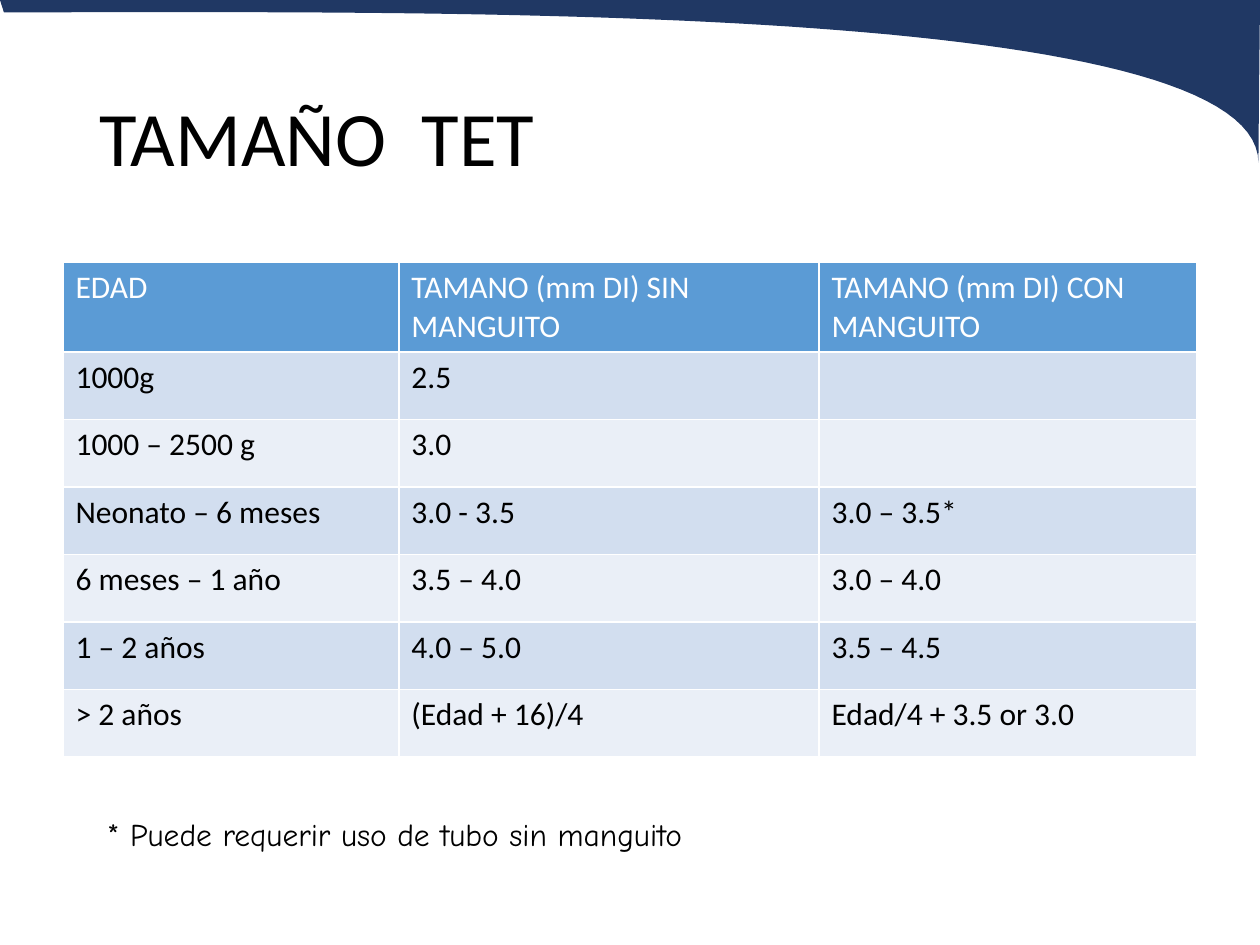
from dataclasses import dataclass

from lxml import etree
from pptx import Presentation
from pptx import util as u
from pptx.dml.color import RGBColor
from pptx.enum import text
from pptx.oxml import ns

BODY_FONT, NOTE_FONT = "Calibri", "Comic Neue"
NAVY, BLUE, BLACK, WHITE = "203864", "5B9BD5", "000000", "FFFFFF"
BANDS = ("D2DEEF", "EAEFF7")


@dataclass
class Curve:
    """Cubic Bézier with its four control points in centimetres."""
    start: tuple[float, float]
    first: tuple[float, float]
    second: tuple[float, float]
    end: tuple[float, float]

    def points(self, steps: int = 60) -> list[tuple[float, float]]:
        controls = (self.start, self.first, self.second, self.end)
        result = []
        for step in range(1, steps + 1):
            t = step / steps
            weights = ((1 - t) ** 3, 3 * t * (1 - t) ** 2, 3 * t * t * (1 - t), t ** 3)
            result.append(tuple(u.Cm(sum(w * c[axis] for w, c in zip(weights, controls)))
                                for axis in (0, 1)))
        return result


@dataclass
class SizeRow:
    age: str
    uncuffed: str
    cuffed: str = ""


HEADER = SizeRow("EDAD", "TAMANO (mm DI) SIN MANGUITO", "TAMANO (mm DI) CON MANGUITO")
SIZES = [
    SizeRow("1000g", "2.5"),
    SizeRow("1000 – 2500 g", "3.0"),
    SizeRow("Neonato – 6 meses", "3.0 - 3.5", "3.0 – 3.5*"),
    SizeRow("6 meses – 1 año", "3.5 – 4.0", "3.0 – 4.0"),
    SizeRow("1 – 2 años", "4.0 – 5.0", "3.5 – 4.5"),
    SizeRow("> 2 años", "(Edad + 16)/4", "Edad/4 + 3.5 or 3.0"),
]
COLUMN_WIDTHS = (6.77, 8.47, 7.62)
HEADER_HEIGHT, ROW_HEIGHT = 1.8, 1.36


def color(value: str) -> RGBColor:
    return RGBColor.from_string(value)


def set_font(font, name: str, size: float, ink: str) -> None:
    font.name, font.size, font.bold = name, u.Pt(size), False
    font.color.rgb = color(ink)


def draw_swoosh(page) -> None:
    edge = Curve((25.4, 0), (25.4, 0.36), (25.37, 2.92), (25.37, 3.28))
    sweep = Curve(edge.end, (25.35, 0), (8.53, 0.25), (0.08, 0.25))
    builder = page.shapes.build_freeform(0, 0)
    builder.add_line_segments([(u.Cm(25.4), 0), *edge.points(), *sweep.points()], close=True)
    swoosh = builder.convert_to_shape()
    swoosh.shadow.inherit = False
    swoosh.fill.solid()
    swoosh.fill.fore_color.rgb = color(NAVY)
    swoosh.line.fill.background()
    # Behind the title
    page.shapes._spTree.insert(2, swoosh._element)


def write_title(page) -> None:
    title = page.shapes.title
    title.left, title.top = u.Cm(1.75), u.Cm(1.02)
    title.width, title.height = u.Cm(21.9), u.Cm(3.68)
    frame = title.text_frame
    frame.vertical_anchor = text.MSO_ANCHOR.MIDDLE
    para = frame.paragraphs[0]
    para.alignment, para.line_spacing = text.PP_ALIGN.LEFT, 0.9
    spans = [para.add_run() for _ in range(3)]
    for span, words in zip(spans, ("TAMAÑO", " ", "TET")):
        span.text = words
    # Widen the gap between the two words
    spans[1]._r.get_or_add_rPr().set("spc", "1000")
    set_font(para.font, BODY_FONT, 44, BLACK)


def add_borders(cell) -> None:
    properties = cell._tc.get_or_add_tcPr()
    for side in ("a:lnL", "a:lnR", "a:lnT", "a:lnB"):
        line = etree.SubElement(properties, ns.qn(side), w=str(u.Pt(1)))
        fill = etree.SubElement(line, ns.qn("a:solidFill"))
        etree.SubElement(fill, ns.qn("a:srgbClr"), val=WHITE)


def fill_row(table, index: int, row: SizeRow, background: str, ink: str) -> None:
    for cell, words in zip(table.rows[index].cells, (row.age, row.uncuffed, row.cuffed)):
        add_borders(cell)
        cell.fill.solid()
        cell.fill.fore_color.rgb = color(background)
        cell.text = words
        set_font(cell.text_frame.paragraphs[0].font, BODY_FONT, 18, ink)


def draw_table(page) -> None:
    height = HEADER_HEIGHT + ROW_HEIGHT * len(SIZES)
    table = page.shapes.add_table(len(SIZES) + 1, len(COLUMN_WIDTHS), u.Cm(1.27), u.Cm(5.29),
                                  u.Cm(sum(COLUMN_WIDTHS)), u.Cm(height)).table
    for column, width in zip(table.columns, COLUMN_WIDTHS):
        column.width = u.Cm(width)
    for index, row in enumerate(table.rows):
        row.height = u.Cm(ROW_HEIGHT if index else HEADER_HEIGHT)
    fill_row(table, 0, HEADER, BLUE, WHITE)
    for index, size in enumerate(SIZES):
        fill_row(table, index + 1, size, BANDS[index % 2], BLACK)


def write_note(page) -> None:
    box = page.shapes.add_textbox(u.Cm(1.91), u.Cm(16.31), u.Cm(13.31), u.Cm(1.02))
    frame = box.text_frame
    frame.word_wrap = False
    frame.auto_size = text.MSO_AUTO_SIZE.SHAPE_TO_FIT_TEXT
    para = frame.paragraphs[0]
    para.text = "* Puede requerir uso de tubo sin manguito"
    set_font(para.font, NOTE_FONT, 18, BLACK)


def main() -> None:
    deck = Presentation()
    deck.slide_width, deck.slide_height = u.Cm(25.4), u.Cm(19.05)
    page = deck.slides.add_slide(deck.slide_layouts[5])
    draw_swoosh(page)
    write_title(page)
    draw_table(page)
    write_note(page)
    deck.save("out.pptx")


if __name__ == "__main__":
    main()
